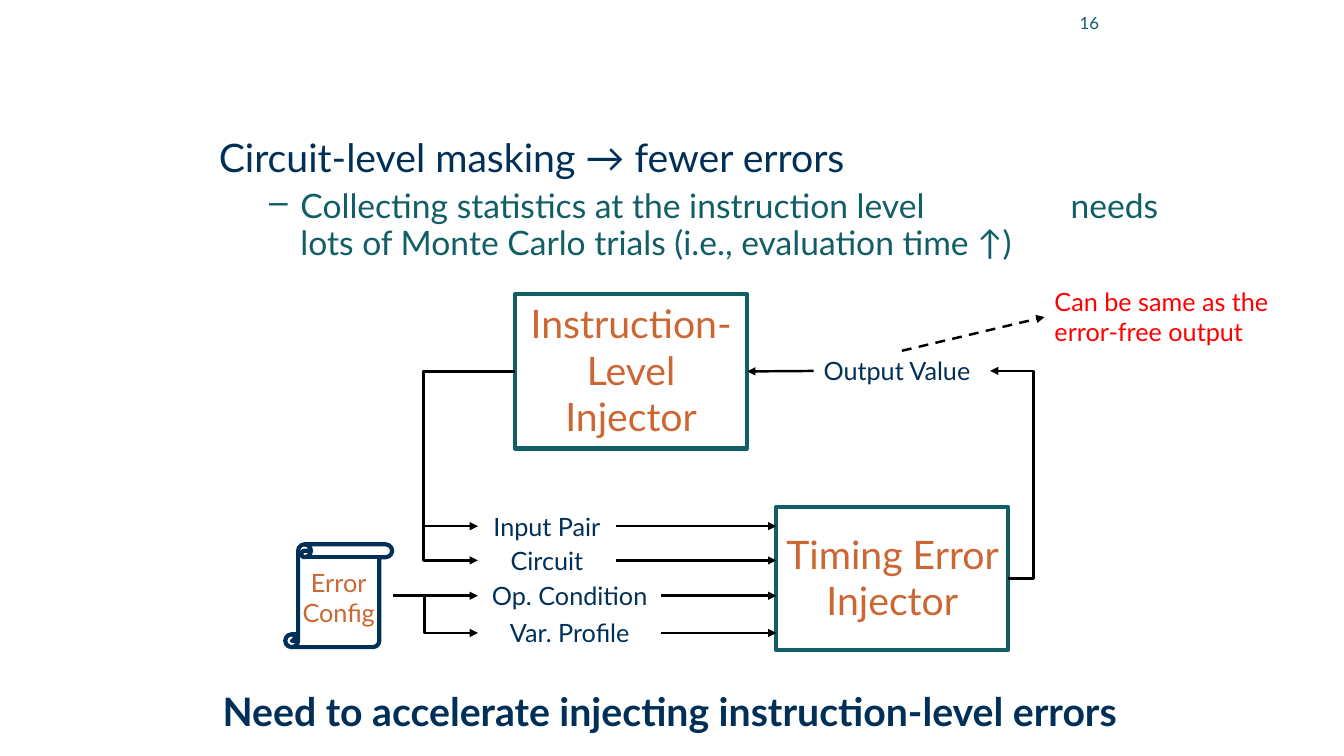
"""Build the slide on circuit-level masking and error injection."""
from dataclasses import dataclass

from lxml import etree
from pptx import Presentation
from pptx.dml.color import RGBColor
from pptx.enum.dml import MSO_LINE
from pptx.enum.shapes import MSO_CONNECTOR, MSO_SHAPE
from pptx.enum.text import MSO_ANCHOR, PP_ALIGN
from pptx.oxml.ns import qn
from pptx.util import Inches, Pt

LEFT, MID, RIGHT = PP_ALIGN.LEFT, PP_ALIGN.CENTER, PP_ALIGN.RIGHT
TOP, CORE = MSO_ANCHOR.TOP, MSO_ANCHOR.MIDDLE
RECT, SCROLL = MSO_SHAPE.RECTANGLE, MSO_SHAPE.VERTICAL_SCROLL
PLAIN, ELBOW = MSO_CONNECTOR.STRAIGHT, MSO_CONNECTOR.ELBOW
DASH = MSO_LINE.DASH
NORTH, WEST, EAST = 0, 1, 3


@dataclass(frozen=True)
class Theme:
    """Hold the colours, font and type sizes."""
    font: str = "Lato"
    navy: str = "003057"
    teal: str = "115E67"
    rust: str = "CC6633"
    red: str = "FF0000"
    black: str = "000000"
    big: int = 28
    sub: int = 24
    note: int = 18
    tiny: int = 12
    edge: float = 3
    wire: float = 1.75


def write(para, text, font, size, color, bold=False, align=LEFT, line=None, gap=None):
    """Write one run of text into a paragraph and return it."""
    para.alignment = align
    if line:
        para.line_spacing = line
    if gap is not None:
        para.space_before = Pt(gap)
    run = para.add_run()
    run.text = text
    run.font.name = font
    run.font.size = Pt(size)
    run.font.bold = bold
    run.font.color.rgb = RGBColor.from_string(color)
    return run


class Board:
    """Draw styled elements on the current slide."""

    def __init__(self, theme, slide):
        """Keep the theme and the slide."""
        self.theme = theme
        self.slide = slide

    def fill(self, shape, words, inset, anchor, **form):
        """Put lines of text in a shape."""
        frame = shape.text_frame
        frame.word_wrap = True
        frame.vertical_anchor = anchor
        frame.margin_left = frame.margin_right = Inches(inset)
        frame.margin_top = frame.margin_bottom = Inches(inset / 2)
        for i, part in enumerate(words):
            para = frame.add_paragraph() if i else frame.paragraphs[0]
            write(para, part, self.theme.font, **form)

    def text(self, place, words, inset=0.1, anchor=TOP, **form):
        """Add a text box."""
        box = self.slide.shapes.add_textbox(*map(Inches, place))
        self.fill(box, [words], inset, anchor, **form)
        return box

    def block(self, kind, place, words, color, size):
        """Add an outlined shape with centred text."""
        shape = self.slide.shapes.add_shape(kind, *map(Inches, place))
        shape.shadow.inherit = False
        shape.fill.background()
        shape.line.color.rgb = RGBColor.from_string(color)
        shape.line.width = Pt(self.theme.edge)
        self.fill(shape, words, 0, CORE, size=size, color=self.theme.rust,
                  align=MID, line=0.99)
        return shape

    def point(self, end):
        """Return the spot and joint of an end given as a point or shape side."""
        if isinstance(end[0], float):
            return [Inches(v) for v in end], None
        shape, side = end
        across = {NORTH: 0.5, WEST: 0, EAST: 1}[side]
        down = 0 if side == NORTH else 0.5
        return [int(shape.left + shape.width * across),
                int(shape.top + shape.height * down)], end

    def arrow(self, start, stop, bend=None, dash=None):
        """Add an arrow, bent at a given x if one is set."""
        (x, y), tail = self.point(start)
        (u, v), head = self.point(stop)
        link = self.slide.shapes.add_connector(ELBOW if bend else PLAIN, x, y, u, v)
        if tail:
            link.begin_connect(*tail)
        if head:
            link.end_connect(*head)
        link.line.color.rgb = RGBColor.from_string(self.theme.black)
        link.line.width = Pt(self.theme.wire)
        if dash:
            link.line.dash_style = dash
        props = link._element.spPr
        etree.SubElement(props.find(qn("a:ln")), qn("a:tailEnd"), type="triangle")
        etree.SubElement(props, qn("a:effectLst"))
        if bend:
            ratio = round((Inches(bend) - x) / (u - x) * 100000)
            guide = props.find(qn("a:prstGeom")).get_or_add_avLst()
            etree.SubElement(guide, qn("a:gd"), name="adj1", fmla=f"val {ratio}")

    def points(self, place, head, sub):
        """Add a heading with a dashed point whose last part stands apart."""
        look = self.theme
        box = self.text(place, head, inset=0, size=look.big, color=look.navy, line=0.9)
        para = box.text_frame.add_paragraph()
        para.level = 1
        props = para._p.get_or_add_pPr()
        props.set("marL", str(Inches(0.81)))
        props.set("indent", str(Inches(-0.31)))
        tint = etree.SubElement(props, qn("a:buClr"))
        etree.SubElement(tint, qn("a:srgbClr"), val=look.teal)
        etree.SubElement(props, qn("a:buChar"), char="–")
        first, last = sub
        form = dict(font=look.font, size=look.sub, color=look.teal, line=0.9, gap=6)
        write(para, first, **form)
        space = write(para, " ", **form)
        space._r.get_or_add_rPr().set("spc", "9800")
        write(para, last, **form)


def main():
    """Build and save the slide."""
    deck = Presentation()
    deck.slide_width, deck.slide_height = Inches(13.33), Inches(7.5)
    look = Theme()
    board = Board(look, deck.slides.add_slide(deck.slide_layouts[6]))
    label = dict(size=look.note, color=look.navy)

    board.points((2.17, 1.38, 9.33, 1.3), "Circuit-level masking → fewer errors",
                 ("Collecting statistics at the instruction level",
                  "needs lots of Monte Carlo trials (i.e., evaluation time ↑)"))
    board.text((9.78, -0.02, 1.22, 0.5), "16", anchor=CORE,
               size=look.tiny, color=look.teal, align=RIGHT)

    timing = board.block(RECT, (7.7, 5.03, 2.3, 1.42), ["Timing Error Injector"],
                         look.teal, look.big)
    level = board.block(RECT, (5.11, 2.92, 2.3, 1.53),
                        ["Instruction-Level", "Injector"], look.teal, look.big)
    board.block(SCROLL, (2.83, 5.4, 1.06, 1.02), ["Error", "Config"],
                look.navy, look.note)

    config = (3.9, 5.91)
    inputs = [("Input Pair", 5.22, 1.37, (level, WEST), 4.2),
              ("Circuit", 5.56, 1.37, (level, WEST), 4.2),
              ("Op. Condition", 5.91, 1.82, config, None),
              ("Var. Profile", 6.28, 1.82, (4.17, 5.91), 4.21)]
    for name, y, width, source, bend in inputs:
        box = board.text((4.74, y - 0.2, width, 0.4), name, align=MID, **label)
        board.arrow(source, (box, WEST), bend)
        board.arrow((box, EAST), (7.7, y))

    value = board.text((8.07, 3.48, 1.75, 0.4), "Output Value", **label)
    board.arrow((timing, EAST), (value, EAST), 10.25)
    board.arrow((value, WEST), (level, EAST))
    note = board.text((10.36, 2.79, 2.35, 0.71), "Can be same as the error-free output",
                      size=look.note, color=look.red)
    board.arrow((value, NORTH), (note, WEST), dash=DASH)

    board.text((2.11, 6.77, 9.9, 0.57),
               "Need to accelerate injecting instruction-level errors",
               size=look.big, color=look.navy, bold=True)
    deck.save("out.pptx")


if __name__ == "__main__":
    main()
